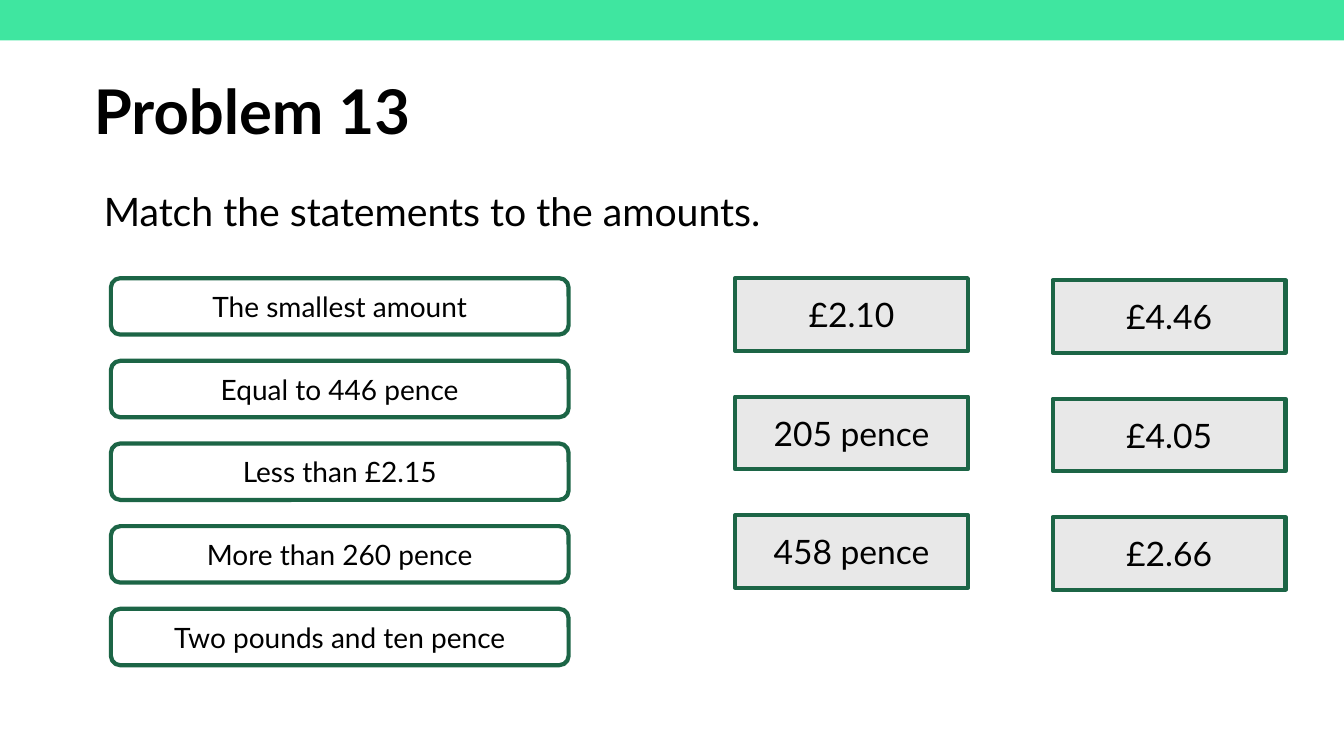
from pptx import Presentation
from pptx.dml.color import RGBColor
from pptx.enum.shapes import MSO_SHAPE
from pptx.enum.text import MSO_ANCHOR, MSO_AUTO_SIZE, PP_ALIGN
from pptx.util import Inches, Pt
from lxml import etree

BLACK = RGBColor(0x00, 0x00, 0x00)
MINT = RGBColor(0x3F, 0xE6, 0xA0)
DARK_GREEN = RGBColor(0x1C, 0x65, 0x46)
LIGHT_GREY = RGBColor(0xE8, 0xE8, 0xE8)
DRAWING_NS = "http://schemas.openxmlformats.org/drawingml/2006/main"


def write_text(shape, text, size, alignment, anchor, bold=False):
    frame = shape.text_frame
    frame.word_wrap = True
    frame.auto_size = MSO_AUTO_SIZE.NONE
    frame.vertical_anchor = anchor
    paragraph = frame.paragraphs[0]
    paragraph.text = text
    paragraph.alignment = alignment
    font_format = {"name": "Lato", "size": Pt(size), "bold": bold}
    for name, value in font_format.items():
        setattr(paragraph.runs[0].font, name, value)
    paragraph.runs[0].font.color.rgb = BLACK
    return paragraph


def add_card(kind, left, top, width, height, text, size):
    card = slide.shapes.add_shape(
        kind, Inches(left), Inches(top), Inches(width), Inches(height))
    card.shadow.inherit = False
    card.line.color.rgb = DARK_GREEN
    card.line.width = Pt(3)
    write_text(card, text, size, PP_ALIGN.CENTER, MSO_ANCHOR.MIDDLE)
    return card


presentation = Presentation()
presentation.slide_width = Inches(13.33)
presentation.slide_height = Inches(7.5)
slide = presentation.slides.add_slide(presentation.slide_layouts[1])

# Top banner
banner = slide.shapes.add_shape(
    MSO_SHAPE.RECTANGLE, 0, Inches(-0.02), presentation.slide_width, Inches(0.42))
banner.shadow.inherit = False
banner.fill.solid()
banner.fill.fore_color.rgb = MINT
banner.line.fill.background()

# Title
title = slide.shapes.title
title.left, title.top = Inches(0.83), Inches(0.41)
title.width, title.height = Inches(11.5), Inches(1.45)
heading = write_text(title, "Problem 13", 44, PP_ALIGN.LEFT, MSO_ANCHOR.MIDDLE, bold=True)
heading.line_spacing = 0.9

# Instruction, without a bullet
body = slide.placeholders[1]
body.left, body.top = Inches(0.93), Inches(1.86)
body.width, body.height = Inches(10.97), Inches(1.08)
instruction = write_text(
    body, "Match the statements to the amounts.", 28, PP_ALIGN.LEFT, MSO_ANCHOR.TOP)
instruction.line_spacing = 0.9
instruction.space_before = Pt(0)
properties = instruction._p.get_or_add_pPr()
properties.set("marL", "0")
properties.set("indent", "0")
etree.SubElement(properties, f"{{{DRAWING_NS}}}buNone")

# Statements
statements = [
    "The smallest amount",
    "Equal to 446 pence",
    "Less than £2.15",
    "More than 260 pence",
    "Two pounds and ten pence",
]
for row, statement in enumerate(statements):
    card = add_card(MSO_SHAPE.ROUNDED_RECTANGLE, 1.1, 2.76 + 0.82 * row, 4.54, 0.56,
                    statement, 20)
    card.fill.background()

# Amounts in two columns: left, top, texts
amount_columns = [
    (7.29, 2.76, ["£2.10", "205 pence", "458 pence"]),
    (10.44, 2.78, ["£4.46", "£4.05", "£2.66"]),
]
for left, top, amounts in amount_columns:
    for row, amount in enumerate(amounts):
        card = add_card(MSO_SHAPE.RECTANGLE, left, top + 1.175 * row, 2.31, 0.72, amount, 24)
        card.fill.solid()
        card.fill.fore_color.rgb = LIGHT_GREY

presentation.save("out.pptx")
